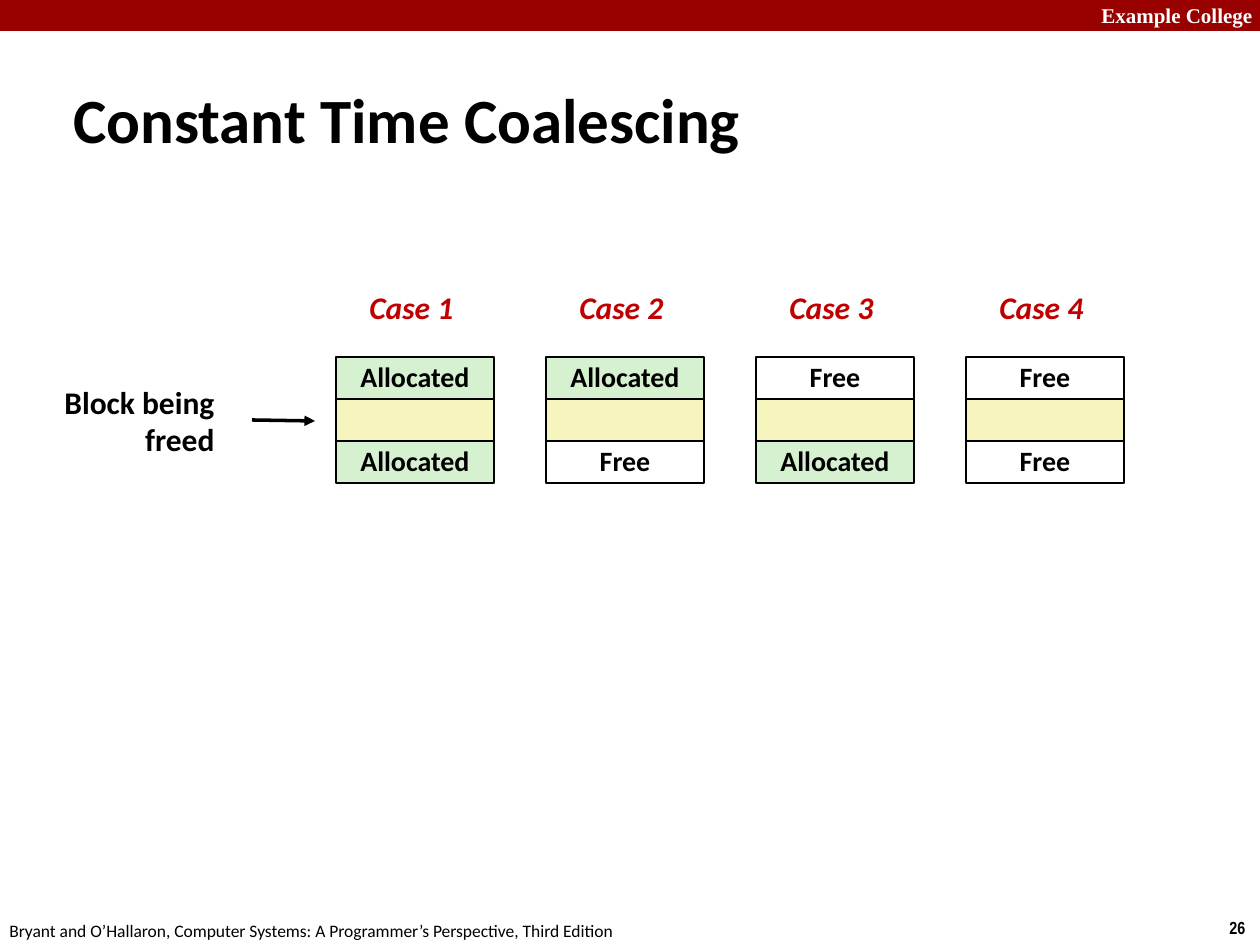
from dataclasses import dataclass

from lxml import etree
from pptx import Presentation
from pptx import util as u
from pptx.dml.color import RGBColor
from pptx.enum import shapes, text
from pptx.oxml.ns import qn

SCALE = 914400 / 126
BLACK, WHITE, RED, CRIMSON = "000000", "FFFFFF", "990000", "C00000"
GREEN, YELLOW = "D5F1CF", "F6F5BD"
LEFT, TOP, PITCH, WIDE, HIGH = 336, 357, 210, 158, 42
FILLS = {"Allocated": GREEN, "Free": WHITE, "": YELLOW}
ALIGN = text.PP_ALIGN
MID = text.MSO_ANCHOR.MIDDLE


@dataclass(frozen=True)
class Font:
    size: int
    color: str = BLACK
    bold: bool = True
    italic: bool = False
    face: str = "Calibri"


@dataclass(frozen=True)
class Box:
    x: int
    y: int
    w: int
    h: int


@dataclass(frozen=True)
class Case:
    name: str
    above: str
    below: str


CASES = [
    Case("Case 1", "Allocated", "Allocated"),
    Case("Case 2", "Allocated", "Free"),
    Case("Case 3", "Free", "Allocated"),
    Case("Case 4", "Free", "Free"),
]


def px(n: int) -> int:
    return u.Emu(round(n * SCALE))


def rgb(code: str) -> RGBColor:
    return RGBColor.from_string(code)


def place(box: Box) -> list[int]:
    return [px(n) for n in (box.x, box.y, box.w, box.h)]


def write(shape, lines: list[str], font: Font, align=ALIGN.LEFT,
          anchor=text.MSO_ANCHOR.TOP, wrap: bool = False,
          space: float = 1.0) -> None:
    frame = shape.text_frame
    frame.word_wrap = wrap
    frame.vertical_anchor = anchor
    for i, line in enumerate(lines):
        para = frame.add_paragraph() if i else frame.paragraphs[0]
        para.alignment = align
        para.line_spacing = space
        run = para.add_run()
        run.text = line
        run.font.name = font.face
        run.font.size = u.Pt(font.size)
        run.font.bold = font.bold
        run.font.italic = font.italic
        run.font.color.rgb = rgb(font.color)


def label(slide, box: Box, lines: list[str], font: Font, **style) -> None:
    write(slide.shapes.add_textbox(*place(box)), lines, font, **style)


def rect(slide, box: Box, fill: str, edge: str | None = None):
    shape = slide.shapes.add_shape(shapes.MSO_SHAPE.RECTANGLE, *place(box))
    shape.shadow.inherit = False
    shape.fill.solid()
    shape.fill.fore_color.rgb = rgb(fill)
    if edge:
        shape.line.color.rgb = rgb(edge)
        shape.line.width = u.Pt(1)
    else:
        shape.line.fill.background()
    return shape


def arrow(slide, x1: int, y1: int, x2: int, y2: int) -> None:
    line = slide.shapes.add_connector(
        shapes.MSO_CONNECTOR.STRAIGHT, px(x1), px(y1), px(x2), px(y2))
    line.line.color.rgb = rgb(BLACK)
    line.line.width = u.Pt(2)
    etree.SubElement(line.line._get_or_add_ln(), qn("a:tailEnd"), type="triangle")
    etree.SubElement(line._element.spPr, qn("a:effectLst"))


def stack(slide, case: Case, x: int) -> None:
    """Draw one case: its name over three adjoining memory blocks."""
    label(slide, Box(x + 21, 284, 110, 50), [case.name],
          Font(18, CRIMSON, italic=True), space=0.98)
    for row, state in enumerate((case.above, "", case.below)):
        block = rect(slide, Box(x, TOP + row * HIGH, WIDE, HIGH),
                     FILLS[state], BLACK)
        if state:
            write(block, [state], Font(16), ALIGN.CENTER, MID, space=0.98)


def main() -> None:
    deck = Presentation()
    deck.slide_width, deck.slide_height = px(1260), px(945)
    slide = deck.slides.add_slide(deck.slide_layouts[6])

    rect(slide, Box(0, 0, 1260, 31), RED)
    label(slide, Box(1089, -4, 180, 38), ["Example College"],
          Font(12, WHITE, face="Times New Roman"))
    label(slide, Box(1217, 911, 43, 34), ["26"],
          Font(10, face="Arial Narrow"))
    label(slide, Box(-3, 914, 640, 34),
          ["Bryant and O’Hallaron, Computer Systems: "
           "A Programmer’s Perspective, Third Edition"],
          Font(10, bold=False))
    label(slide, Box(61, 78, 968, 80), ["Constant Time Coalescing"],
          Font(36), anchor=MID, wrap=True)

    for i, case in enumerate(CASES):
        stack(slide, case, LEFT + i * PITCH)
    label(slide, Box(51, 379, 176, 88), ["Block being", "freed"],
          Font(18), align=ALIGN.RIGHT, space=0.98)
    arrow(slide, 252, 420, 315, 421)

    deck.save("out.pptx")


if __name__ == "__main__":
    main()
